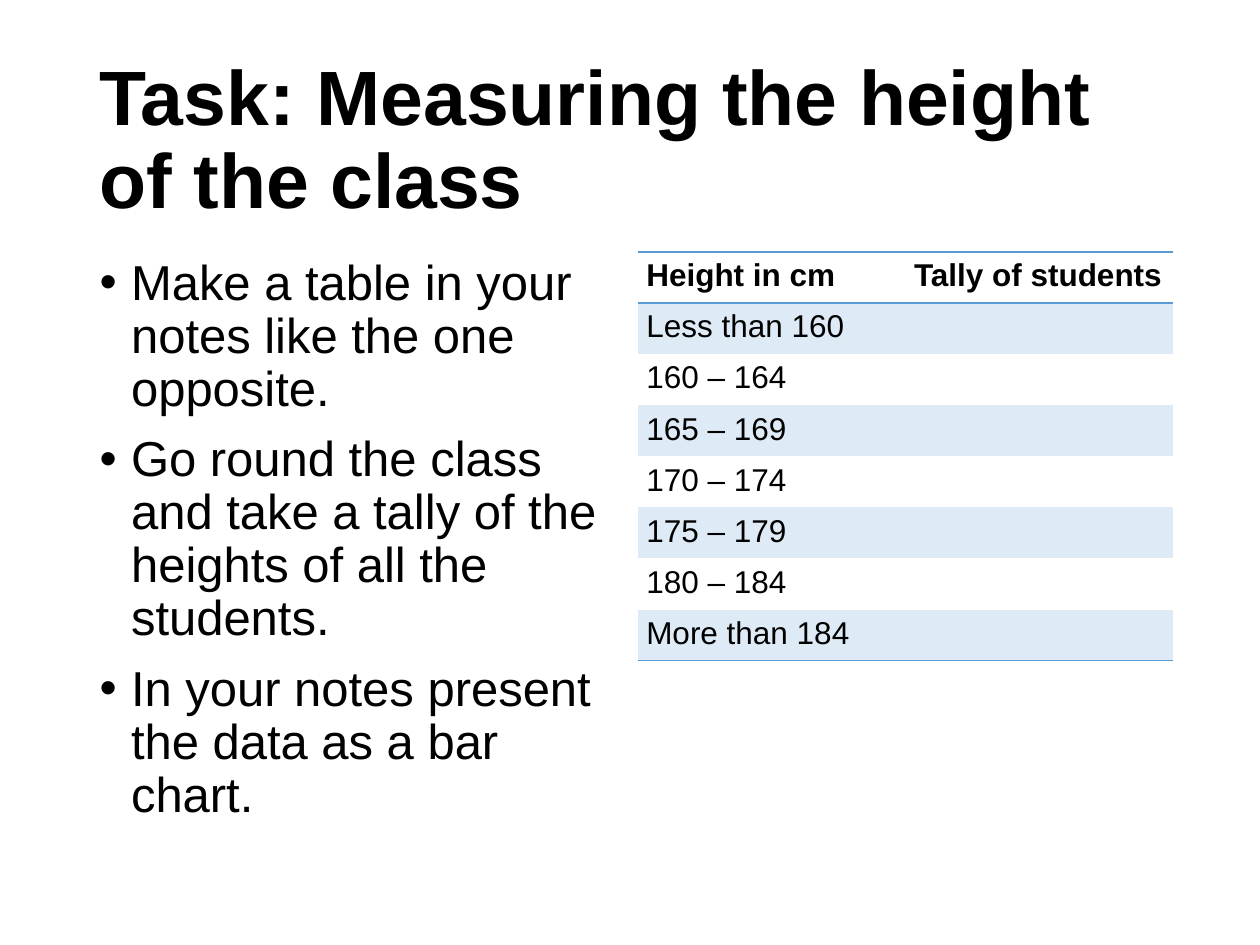
from dataclasses import dataclass

from lxml import etree
from pptx import Presentation, util as u
from pptx.dml.color import RGBColor
from pptx.enum import text as t
from pptx.oxml import ns

# Content
TITLE = "Task: Measuring the height of the class"
STEPS = [
    "Make a table in your notes like the one opposite.",
    "Go round the class and take a tally of the heights of all the students.",
    "In your notes present the data as a bar chart.",
]
HEADER = ("Height in cm", "Tally of students")
HEIGHTS = ["Less than 160", "160 – 164", "165 – 169", "170 – 174",
           "175 – 179", "180 – 184", "More than 184"]


@dataclass(frozen=True)
class Theme:
    font: str = "Arial"
    ink: str = "000000"
    rule: str = "5B9BD5"
    band: str = "DEEBF7"
    title: int = 44
    body: int = 28
    cell: int = 18


THEME = Theme()
PLAIN_TABLE = "{2D5ABB26-0587-4C30-8999-92F81FD0307C}"

# Layout in inches: two equal columns under a full-width title
WIDTH, HEIGHT = 10, 7.5
MARGIN, GAP = 0.69, 0.12
CONTENT = WIDTH - 2 * MARGIN
COLUMN = (CONTENT - GAP) / 2
TITLE_TOP, TITLE_HEIGHT = 0.4, 1.45
BODY_TOP, BODY_HEIGHT = 2, 4.76
ROW = 0.405


def write(paragraph, content, size, bold=False, spacing=None, before=0, bullet=False):
    properties = paragraph._p.get_or_add_pPr()
    if bullet:
        indent = u.Inches(0.25)
        properties.set("marL", str(indent))
        properties.set("indent", str(-indent))
        etree.SubElement(properties, ns.qn("a:buChar"), char="•")
    paragraph.alignment = t.PP_ALIGN.LEFT
    paragraph.space_before = u.Pt(before)
    if spacing:
        paragraph.line_spacing = spacing
    run = paragraph.add_run()
    run.text = content
    run.font.name, run.font.size, run.font.bold = THEME.font, u.Pt(size), bold
    run.font.color.rgb = RGBColor.from_string(THEME.ink)


def place(shape, left, top, width, height):
    shape.left, shape.top = u.Inches(left), u.Inches(top)
    shape.width, shape.height = u.Inches(width), u.Inches(height)


def frame_of(shape, anchor):
    frame = shape.text_frame
    frame.word_wrap = True
    frame.auto_size = t.MSO_AUTO_SIZE.NONE
    frame.vertical_anchor = anchor
    return frame


def add_rules(cell, sides):
    """Draw horizontal borders; they come before the fill in the cell properties."""
    properties = cell._tc.get_or_add_tcPr()
    for index, side in enumerate(sides):
        line = etree.Element(ns.qn(f"a:ln{side}"), w=str(u.Pt(1)))
        fill = etree.SubElement(line, ns.qn("a:solidFill"))
        etree.SubElement(fill, ns.qn("a:srgbClr"), val=THEME.rule)
        properties.insert(index, line)


def add_tally_table(slide):
    rows = [HEADER] + [(height, "") for height in HEIGHTS]
    graphic = slide.shapes.add_table(
        len(rows), len(HEADER), u.Inches(MARGIN + COLUMN + GAP), u.Inches(BODY_TOP),
        u.Inches(COLUMN), u.Inches(ROW * len(rows)))
    table = graphic.table
    table.horz_banding = False
    table._tbl.tblPr.find(ns.qn("a:tableStyleId")).text = PLAIN_TABLE
    rules = {0: "TB", len(rows) - 1: "B"}
    for r, row in enumerate(rows):
        for c, content in enumerate(row):
            cell = table.cell(r, c)
            cell.margin_left = cell.margin_right = u.Inches(0.07)
            if content:
                write(cell.text_frame.paragraphs[0], content, THEME.cell, bold=r == 0)
            if r % 2:
                cell.fill.solid()
                cell.fill.fore_color.rgb = RGBColor.from_string(THEME.band)
            else:
                cell.fill.background()
            add_rules(cell, rules.get(r, ""))


def main():
    presentation = Presentation()
    presentation.slide_width, presentation.slide_height = u.Inches(WIDTH), u.Inches(HEIGHT)
    slide = presentation.slides.add_slide(presentation.slide_layouts[1])

    # Title
    title = slide.shapes.title
    place(title, MARGIN, TITLE_TOP, CONTENT, TITLE_HEIGHT)
    frame = frame_of(title, t.MSO_ANCHOR.MIDDLE)
    write(frame.paragraphs[0], TITLE, THEME.title, bold=True, spacing=0.9)

    # Steps
    body = slide.placeholders[1]
    place(body, MARGIN, BODY_TOP, COLUMN, BODY_HEIGHT)
    frame = frame_of(body, t.MSO_ANCHOR.TOP)
    for index, step in enumerate(STEPS):
        paragraph = frame.add_paragraph() if index else frame.paragraphs[0]
        write(paragraph, step, THEME.body, spacing=0.9,
              before=10 if index else 0, bullet=True)

    # Tally table
    add_tally_table(slide)
    presentation.save("out.pptx")


if __name__ == "__main__":
    main()
